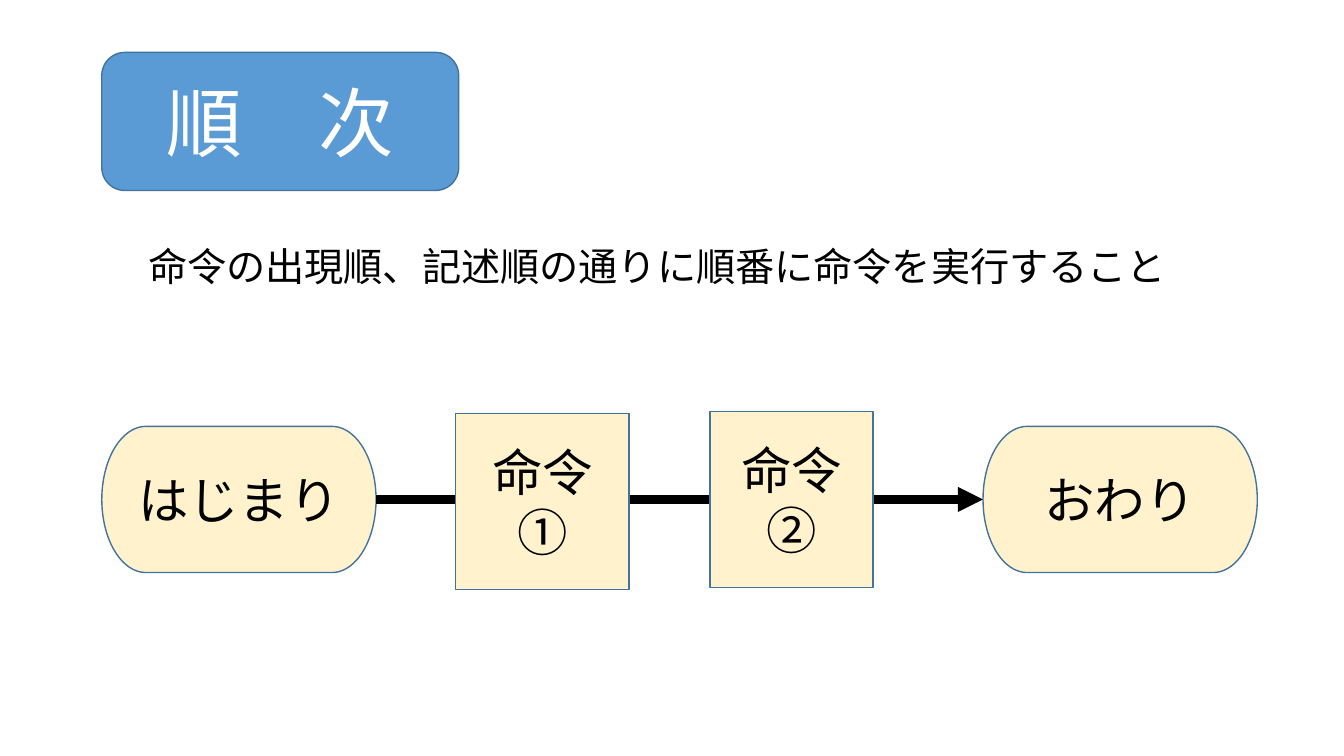
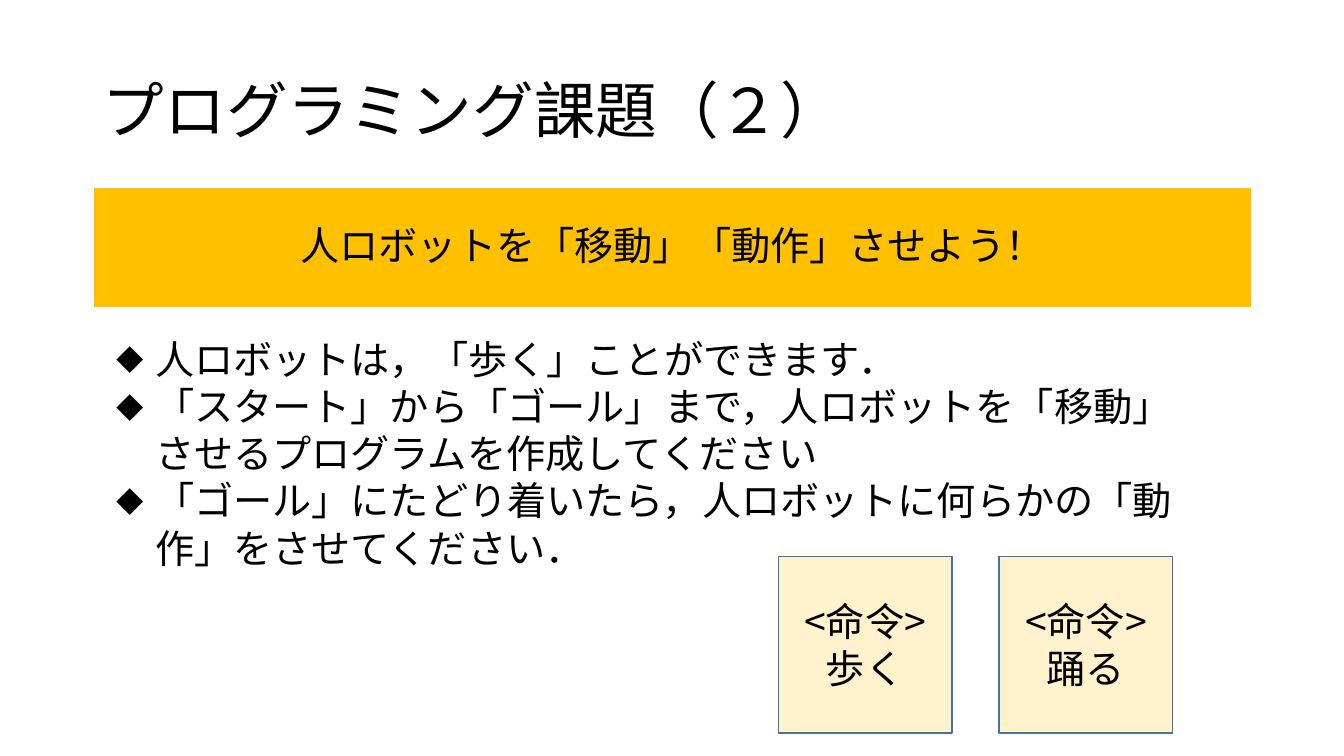
"""Build two slides on sequential execution and a robot programming task."""
from dataclasses import dataclass

from lxml import etree
from pptx import Presentation
from pptx.dml.color import RGBColor
from pptx.enum.shapes import MSO_CONNECTOR, MSO_SHAPE
from pptx.enum.text import MSO_ANCHOR, MSO_AUTO_SIZE, PP_ALIGN
from pptx.oxml.ns import qn
from pptx.util import Inches, Pt

ROUNDED = MSO_SHAPE.ROUNDED_RECTANGLE
TERMINATOR = MSO_SHAPE.FLOWCHART_TERMINATOR
PROCESS = MSO_SHAPE.FLOWCHART_PROCESS
STRAIGHT = MSO_CONNECTOR.STRAIGHT
MIDDLE, TOP = MSO_ANCHOR.MIDDLE, MSO_ANCHOR.TOP
LEFT, CENTER = PP_ALIGN.LEFT, PP_ALIGN.CENTER
NO_FIT = MSO_AUTO_SIZE.NONE


@dataclass(frozen=True)
class Theme:
    font: str = "Noto Sans CJK JP"
    black: RGBColor = RGBColor(0x00, 0x00, 0x00)
    white: RGBColor = RGBColor(0xFF, 0xFF, 0xFF)
    blue: RGBColor = RGBColor(0x5B, 0x9B, 0xD5)
    outline: RGBColor = RGBColor(0x43, 0x73, 0x9E)
    cream: RGBColor = RGBColor(0xFF, 0xF2, 0xCC)
    amber: RGBColor = RGBColor(0xFF, 0xC0, 0x00)
    heading: int = 54
    title: int = 44
    step: int = 36
    body: int = 28


theme = Theme()


def write(sp, lines, size, color=theme.black, align=CENTER, anchor=MIDDLE,
          spacing=1.0, bullet=None):
    tf = sp.text_frame
    tf.word_wrap = True
    tf.auto_size = NO_FIT
    tf.vertical_anchor = anchor
    for i, line in enumerate(lines):
        p = tf.paragraphs[0] if i == 0 else tf.add_paragraph()
        p.alignment = align
        p.line_spacing = spacing
        p.space_before = p.space_after = Pt(0)
        pPr = p._p.get_or_add_pPr()
        indent = Inches(0.38) if bullet else 0
        pPr.set("marL", str(indent))
        pPr.set("indent", str(-indent))
        if bullet:
            etree.SubElement(pPr, qn("a:buSzPct"), val="70000")
            etree.SubElement(pPr, qn("a:buFont"), typeface=theme.font)
            etree.SubElement(pPr, qn("a:buChar"), char=bullet)
        else:
            etree.SubElement(pPr, qn("a:buNone"))
        r = p.add_run()
        r.text = line
        r.font.size = Pt(size)
        r.font.color.rgb = color
        r.font.name = theme.font
        etree.SubElement(r._r.get_or_add_rPr(), qn("a:ea"), typeface=theme.font)


def add_box(slide, kind, at, lines, size, fill=theme.cream, color=theme.black):
    sp = slide.shapes.add_shape(kind, *map(Inches, at))
    sp.shadow.inherit = False
    sp.fill.solid()
    sp.fill.fore_color.rgb = fill
    sp.line.color.rgb = theme.outline
    sp.line.width = Pt(1)
    write(sp, lines, size, color)
    return sp


prs = Presentation()
prs.slide_width, prs.slide_height = Inches(13.33), Inches(7.5)

slide = prs.slides.add_slide(prs.slide_layouts[6])
add_box(slide, ROUNDED, (1.01, 0.52, 3.54, 1.37), ["順　次"],
        theme.heading, theme.blue, theme.white)
sp = slide.shapes.add_textbox(Inches(1.37), Inches(2.35), Inches(10.41), Inches(0.57))
write(sp, ["命令の出現順、記述順の通りに順番に命令を実行すること"],
      theme.body, align=LEFT, anchor=TOP)
sp.text_frame.word_wrap = False

start, end = [
    add_box(slide, TERMINATOR, (left, 4.23, 2.72, 1.45), [label], theme.step)
    for left, label in ((1.01, "はじまり"), (9.75, "おわり"))
]
arrow = slide.shapes.add_connector(STRAIGHT, 0, 0, 0, 0)
arrow.begin_connect(start, 3)
arrow.end_connect(end, 1)
arrow.line.color.rgb = theme.black
arrow.line.width = Pt(6)
etree.SubElement(arrow.line._get_or_add_ln(), qn("a:tailEnd"), type="triangle")
etree.SubElement(arrow._element.spPr, qn("a:effectLst"))

for left, top, width, number in ((4.52, 4.1, 1.72, "①"), (7.04, 4.08, 1.62, "②")):
    add_box(slide, PROCESS, (left, top, width, 1.75), ["命令", number], theme.step)

slide = prs.slides.add_slide(prs.slide_layouts[1])
title, banner = slide.placeholders
for sp, top, height in ((title, 0.4, 1.45), (banner, 1.85, 1.21)):
    sp.left, sp.top = Inches(0.92), Inches(top)
    sp.width, sp.height = Inches(11.5), Inches(height)
write(title, ["プログラミング課題（２）"], theme.title, align=LEFT, spacing=0.9)
banner.fill.solid()
banner.fill.fore_color.rgb = theme.amber
banner.line.color.rgb = theme.white
banner.line.width = Pt(1.5)
write(banner, ["人ロボットを「移動」「動作」させよう！"], theme.body, spacing=0.9)

sp = slide.shapes.add_textbox(Inches(1.06), Inches(3.28), Inches(11.03), Inches(2.46))
write(sp, [
    "人ロボットは，「歩く」ことができます．",
    "「スタート」から「ゴール」まで，人ロボットを「移動」させるプログラムを作成してください",
    "「ゴール」にたどり着いたら，人ロボットに何らかの「動作」をさせてください．",
], theme.body, align=LEFT, anchor=TOP, bullet="◆")

for left, action in ((7.72, "歩く"), (9.91, "踊る")):
    add_box(slide, PROCESS, (left, 5.52, 1.72, 1.75), ["<命令>", action], theme.body)

prs.save("out.pptx")
